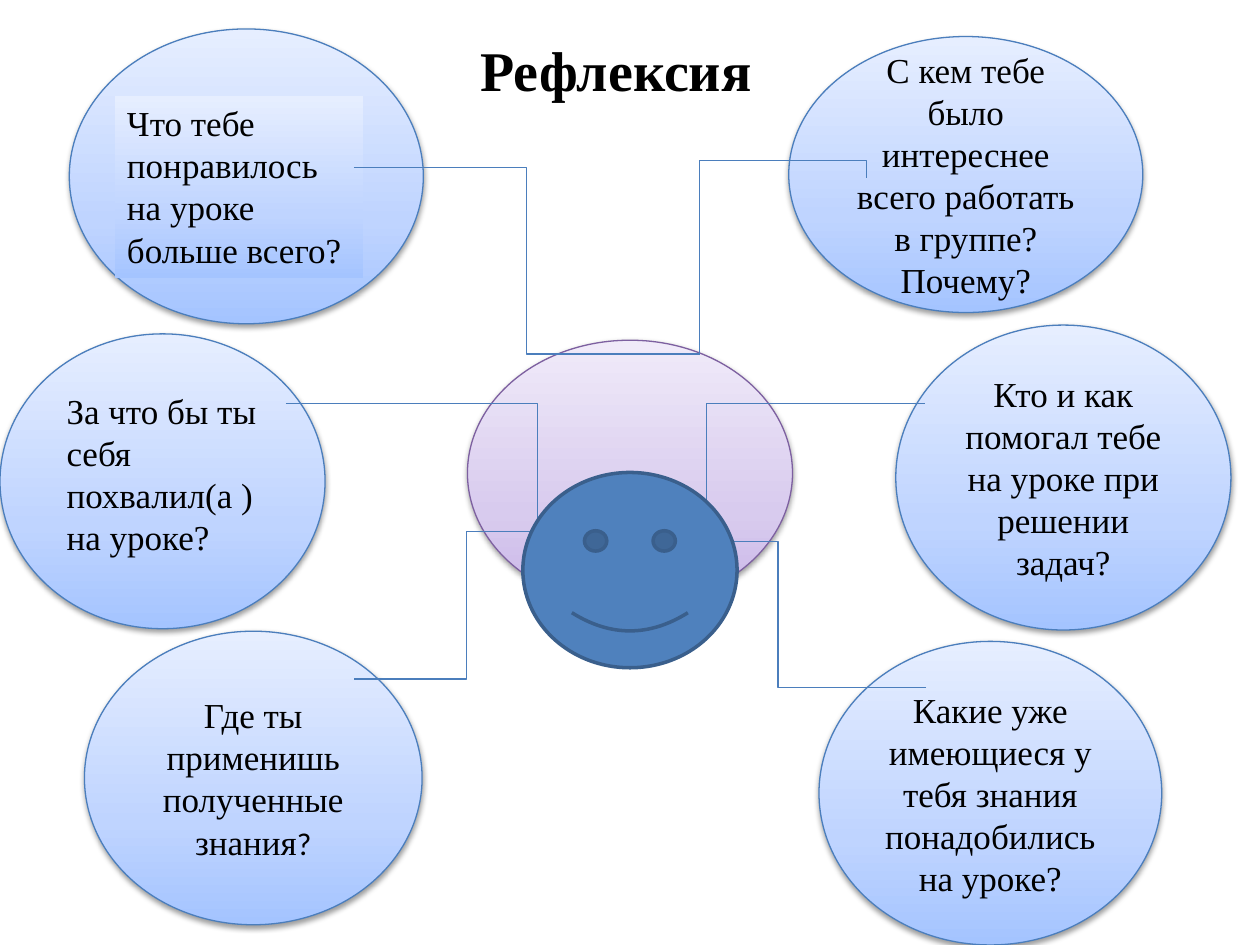
from copy import deepcopy

from lxml import etree
from pptx import Presentation
from pptx.dml.color import RGBColor
from pptx.enum.shapes import MSO_CONNECTOR, MSO_SHAPE
from pptx.enum.text import MSO_ANCHOR, PP_ALIGN
from pptx.oxml.ns import qn
from pptx.util import Inches, Pt

OVAL, RECT, SMILEY = MSO_SHAPE.OVAL, MSO_SHAPE.RECTANGLE, MSO_SHAPE.SMILEY_FACE
ELBOW = MSO_CONNECTOR.ELBOW
LEFT, CENTER = PP_ALIGN.LEFT, PP_ALIGN.CENTER
TOP, MIDDLE = MSO_ANCHOR.TOP, MSO_ANCHOR.MIDDLE

CELL = Inches(0.1)  # the slide is a grid of 100 columns by 75 rows
BLUE = ("A4C4FF", "BFD4FF", "E6EEFF")
PURPLE = ("C9B5E8", "D8CBEE", "F0EAF9")
BLUE_EDGE, PURPLE_EDGE = "4B7EBC", "7D60A0"
BODY = {"size": Pt(20), "name": "Times New Roman"}
HEADING = {"size": Pt(32), "name": "Times New Roman", "bold": True}
MARK = {"size": Pt(18), "name": "Calibri"}


def color(hex_string):
    return RGBColor.from_string(hex_string)


def write(holder, runs, align, anchor):
    """Fill a shape with one wrapped paragraph of (text, format) runs."""
    frame = holder.text_frame
    frame.word_wrap, frame.vertical_anchor = True, anchor
    paragraph = frame.paragraphs[0]
    paragraph.alignment = align
    for text, style in runs:
        run = paragraph.add_run()
        run.text = text
        run.font.color.rgb = color("000000")
        for attribute, value in style.items():
            setattr(run.font, attribute, value)


prs = Presentation()
prs.slide_width, prs.slide_height = 100 * CELL, 75 * CELL
slide = prs.slides.add_slide(prs.slide_layouts[6])
shapes = slide.shapes

# Gradient areas: preset, (column, row, columns, rows), gradient, edge, runs, align, anchor
bubbles = [
    (OVAL, (37.1, 27, 25.8, 21.1), PURPLE, PURPLE_EDGE, [], CENTER, MIDDLE),
    (OVAL, (62.6, 2.9, 28.1, 21.9), BLUE, BLUE_EDGE,
     [("С кем тебе было интереснее всего работать в группе? Почему?", BODY)], CENTER, MIDDLE),
    (OVAL, (71.1, 25.8, 26.6, 24.2), BLUE, BLUE_EDGE,
     [("Кто и как помогал тебе на уроке при решении задач?", BODY)], CENTER, MIDDLE),
    (OVAL, (65, 50.9, 27.2, 24.1), BLUE, BLUE_EDGE,
     [("Какие уже имеющиеся у тебя знания понадобились на уроке?", BODY)], CENTER, MIDDLE),
    (OVAL, (5.5, 2.3, 28.1, 23.4), BLUE, BLUE_EDGE, [], CENTER, MIDDLE),
    (OVAL, (0, 26.5, 25.8, 23.4), BLUE, BLUE_EDGE, [], CENTER, MIDDLE),
    (OVAL, (6.7, 50.1, 26.8, 23.3), BLUE, BLUE_EDGE,
     [("Где ты применишь полученные знания", BODY), ("?", MARK)], CENTER, MIDDLE),
    (RECT, (9.1, 7.6, 19.7, 14.5), BLUE, None,
     [("Что тебе понравилось на уроке больше всего?", BODY)], LEFT, TOP),
]
for preset, cells, gradient, edge, runs, align, anchor in bubbles:
    bubble = shapes.add_shape(preset, *(int(n * CELL) for n in cells))
    bubble.shadow.inherit = False
    bubble.fill.gradient()
    bubble.fill.gradient_angle = 90
    stop_list = bubble._element.spPr.find(qn("a:gradFill")).find(qn("a:gsLst"))
    stop_list.insert(1, deepcopy(stop_list[0]))
    for stop, position, shade in zip(bubble.fill.gradient_stops, (0, 0.35, 1), gradient):
        stop.position, stop.color.rgb = position, color(shade)
    if edge:
        bubble.line.color.rgb, bubble.line.width = color(edge), Pt(0.75)
        effects = bubble._element.spPr.find(qn("a:effectLst"))
        shadow = etree.SubElement(effects, qn("a:outerShdw"), blurRad="40000",
                                  dist="20000", dir="5400000", rotWithShape="0")
        black = etree.SubElement(shadow, qn("a:srgbClr"), val="000000")
        etree.SubElement(black, qn("a:alpha"), val="38000")
    else:
        bubble.line.fill.background()
    if runs:
        write(bubble, runs, align, anchor)

# Links before rotation: begin, end, quarter turns, share of the way to the bend
links = [
    ((28.1, 13.3), (55.5, 28.1), 0, 0.5),
    ((69.2, 27.8), (55.1, 14.5), 1, 1.095),
    ((68.6, 44.6), (60.9, 27.2), 1, None),
    ((28.1, 53.9), (45.9, 42.2), 0, 0.5),
    ((73.5, 54.6), (50, 43), 0, 0.5),
    ((22.7, 32), (45.3, 42.2), 0, 0.883),
]
for begin, end, turns, bend in links:
    link = shapes.add_connector(ELBOW, *(int(n * CELL) for n in begin + end))
    link.line.color.rgb, link.line.width = color(BLUE_EDGE), Pt(0.75)
    properties = link._element.spPr
    etree.SubElement(properties, qn("a:effectLst"))
    properties.find(qn("a:xfrm")).set("rot", str(turns * 5400000))
    geometry = properties.find(qn("a:prstGeom"))
    if bend is None:
        geometry.set("prst", "bentConnector2")
    else:
        etree.SubElement(geometry.find(qn("a:avLst")), qn("a:gd"),
                         name="adj1", fmla=f"val {round(bend * 100000)}")

smiley = shapes.add_shape(SMILEY, *(int(n * CELL) for n in (41.5, 37.5, 17, 15.5)))
smiley.shadow.inherit = False
smiley.fill.solid()
smiley.fill.fore_color.rgb = color("4F81BD")
smiley.line.color.rgb, smiley.line.width = color("3A5F8C"), Pt(2)

captions = [
    ((4.3, 30.4, 18, 14.5), "За что бы ты себя похвалил(а ) на уроке?", BODY, LEFT),
    ((35.6, 2.3, 26.6, 6.4), "Рефлексия", HEADING, CENTER),
]
for cells, text, style, align in captions:
    caption = shapes.add_textbox(*(int(n * CELL) for n in cells))
    write(caption, [(text, style)], align, TOP)

prs.save("out.pptx")
